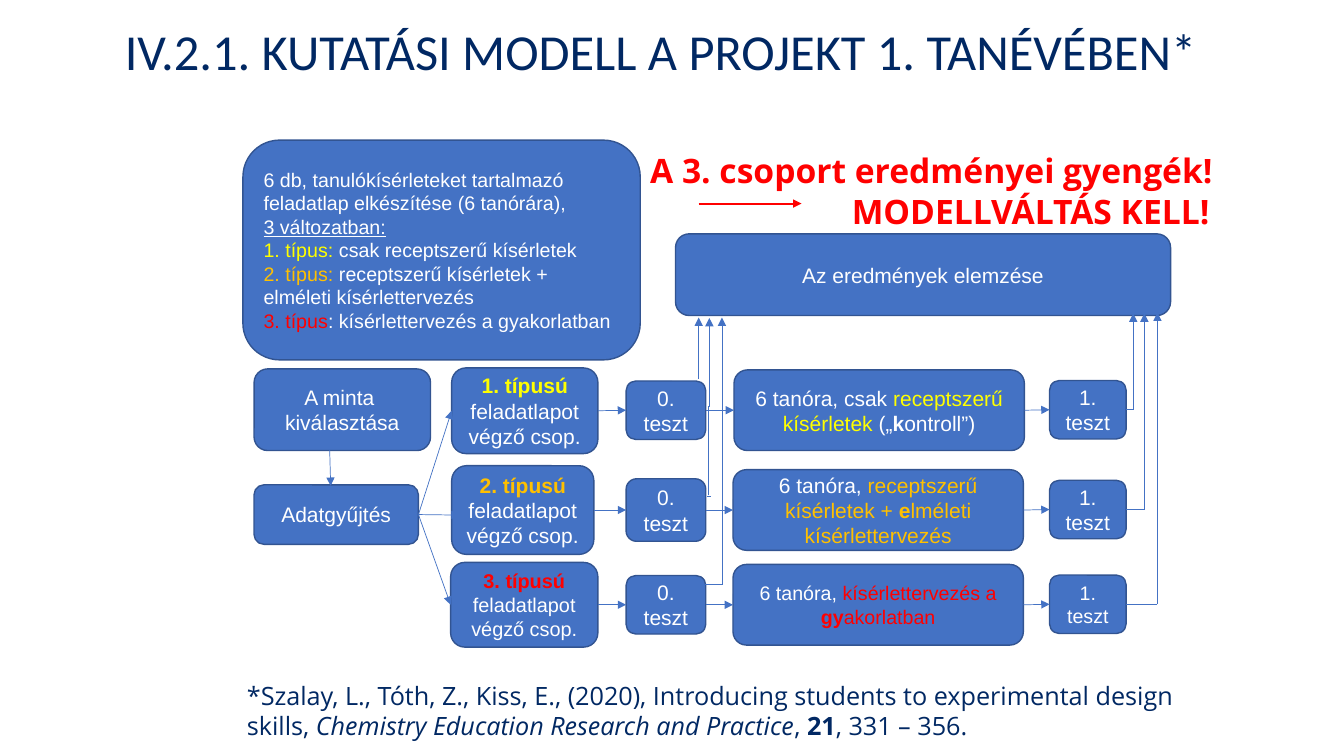
"""Build the research model slide: a three-lane flow chart with title and citation."""
from dataclasses import dataclass
from typing import Optional, Union

from lxml import etree
from pptx import Presentation, util as u
from pptx.dml.color import RGBColor
from pptx.enum import shapes, text
from pptx.oxml.ns import qn

CELL = 0.1
BLUE, EDGE, NAVY = "4472C4", "325491", "012863"
WHITE, YELLOW, ORANGE, RED = "FFFFFF", "FFFF00", "FFC000", "FF0000"
CENTER, LEFT = text.PP_ALIGN.CENTER, text.PP_ALIGN.LEFT


@dataclass
class Run:
    """A stretch of text and what sets it apart from its paragraph."""
    text: str
    color: Optional[str] = None
    bold: Optional[bool] = None
    italic: Optional[bool] = None
    underline: Optional[bool] = None


@dataclass
class Style:
    """The font shared by whole paragraphs."""
    size: float
    name: str = "Arial"
    color: str = WHITE
    align: int = CENTER
    bold: bool = False


@dataclass
class Box:
    """A rectangle in grid columns and rows."""
    x: float
    y: float
    w: float
    h: float


@dataclass
class Point:
    """A place on the grid."""
    x: float
    y: float


@dataclass
class Site:
    """A connection site of a shape."""
    shape: object
    index: int


@dataclass
class Lane:
    """One group's row through the experiment."""
    mid: float
    color: str
    group: Box
    group_size: float
    test_h: float
    lesson_x: float
    lesson_size: float
    lesson: list
    post_x: float
    post_top: float


End = Union[Point, Site]


def grid(n: float) -> int:
    """Turn grid cells into a length."""
    return u.Inches(n * CELL)


def rgb(value: str) -> RGBColor:
    """Turn a hex string into a colour."""
    return RGBColor.from_string(value)


def write(tf, paragraphs: list, style: Style) -> None:
    """Fill a text frame with paragraphs of runs."""
    tf.word_wrap = True
    for i, runs in enumerate(paragraphs):
        p = tf.paragraphs[0] if i == 0 else tf.add_paragraph()
        p.alignment = style.align
        p.font.name, p.font.size, p.font.bold = style.name, u.Pt(style.size), style.bold
        p.font.color.rgb = rgb(style.color)
        for run in runs:
            r = p.add_run()
            r.text = run.text
            r.font.bold, r.font.italic, r.font.underline = run.bold, run.italic, run.underline
            if run.color:
                r.font.color.rgb = rgb(run.color)


def add_box(s, b: Box, paragraphs: list, style: Style):
    """Draw a rounded blue box with text."""
    sp = s.shapes.add_shape(shapes.MSO_SHAPE.ROUNDED_RECTANGLE,
                            grid(b.x), grid(b.y), grid(b.w), grid(b.h))
    sp.shadow.inherit = False
    sp.fill.solid()
    sp.fill.fore_color.rgb = rgb(BLUE)
    sp.line.color.rgb = rgb(EDGE)
    sp.line.width = u.Pt(1)
    sp.text_frame.vertical_anchor = text.MSO_ANCHOR.MIDDLE
    write(sp.text_frame, paragraphs, style)
    return sp


def add_text(s, b: Box, paragraphs: list, style: Style):
    """Place a plain text box and return its text frame."""
    tf = s.shapes.add_textbox(grid(b.x), grid(b.y), grid(b.w), grid(b.h)).text_frame
    write(tf, paragraphs, style)
    return tf


def add_link(s, a: End, b: End, arrow: bool = True, color: str = BLUE, width: float = 0.5,
             kind=shapes.MSO_CONNECTOR.STRAIGHT):
    """Draw a connector between two points or connection sites."""
    p, q = (e if isinstance(e, Point) else Point(0, 0) for e in (a, b))
    c = s.shapes.add_connector(kind, grid(p.x), grid(p.y), grid(q.x), grid(q.y))
    if isinstance(a, Site):
        c.begin_connect(a.shape, a.index)
    if isinstance(b, Site):
        c.end_connect(b.shape, b.index)
    c.line.color.rgb = rgb(color)
    c.line.width = u.Pt(width)
    if arrow:
        etree.SubElement(c.line._get_or_add_ln(), qn("a:tailEnd"), type="triangle")
    etree.SubElement(c._element.spPr, qn("a:effectLst"))
    return c


LANES = [
    Lane(40.7, YELLOW, Box(44.8, 36.5, 14.5, 8.5), 15, 5.8, 72.8, 15,
         [Run("6 tanóra, csak"), Run(" receptszerű kísérletek ", YELLOW), Run("(„"),
          Run("k", bold=True), Run("ontroll”)")], 112.4, 31.1),
    Lane(50.6, ORANGE, Box(44.8, 46.2, 14.1, 8.8), 15, 6.2, 72.7, 15,
         [Run("6 tanóra, "), Run("receptszerű kísérletek + ", ORANGE),
          Run("e", ORANGE, True), Run("lméleti kísérlettervezés", ORANGE)], 113.5, 31.1),
    Lane(60, RED, Box(44.7, 55.8, 14.6, 8.4), 14.2, 5.8, 72.7, 14,
         [Run("6 tanóra, "), Run("kísérlettervezés a ", RED), Run("gy", RED, True),
          Run("akorlatban", RED)], 114.8, 31),
]


def add_lane(s, number: int, lane: Lane, source) -> None:
    """Draw one lane from its group to the final test."""
    label = [Run(f"{number}. típusú ", lane.color, True), Run("feladatlapot végző csop.")]
    group = add_box(s, lane.group, [label], Style(lane.group_size))
    pre = add_box(s, Box(62.1, lane.mid - lane.test_h / 2, 7.9, lane.test_h),
                  [[Run("0. teszt")]], Style(15))
    lesson = add_box(s, Box(lane.lesson_x, lane.mid - 4, 28.8, 8), [lane.lesson],
                     Style(lane.lesson_size))
    post = add_box(s, Box(104.1, lane.mid - 2.95, 7.6, 5.8), [[Run("1. teszt")]],
                   Style(lane.lesson_size))
    add_link(s, Site(source, 3), Point(45.6, 51.1) if number == 2 else Site(group, 1))
    for left, right in ((group, pre), (pre, lesson), (lesson, post)):
        add_link(s, Site(left, 3), Site(right, 1))
    add_link(s, Site(post, 3), Point(lane.post_x, lane.mid - 0.05), arrow=False)
    add_link(s, Point(lane.post_x, lane.mid - 0.05), Point(lane.post_x, lane.post_top))


def main() -> None:
    """Build and save the slide."""
    prs = Presentation()
    prs.slide_width, prs.slide_height = u.Inches(13.33), u.Inches(7.5)
    s = prs.slides.add_slide(prs.slide_layouts[6])

    add_box(s, Box(24.1, 13.9, 39.4, 21.8), [
        [Run("6 db, tanulókísérleteket tartalmazó feladatlap elkészítése (6 tanórára),")],
        [Run("3 változatban:", underline=True)],
        [Run("1. típus: ", YELLOW), Run("csak receptszerű kísérletek")],
        [Run("2. típus: ", ORANGE), Run("receptszerű kísérletek + elméleti kísérlettervezés")],
        [Run("3. típus", RED), Run(": kísérlettervezés a gyakorlatban")],
    ], Style(14, align=LEFT))
    add_box(s, Box(25.2, 36.6, 17.5, 8.1), [[Run("A minta ")], [Run("kiválasztása")]], Style(15))
    data = add_box(s, Box(25.2, 48.1, 16.3, 5.9), [[Run("Adatgyűjtés")]], Style(15))
    add_box(s, Box(67, 23.2, 49.1, 8.1), [[Run("Az eredmények elemzése")]], Style(15))
    add_link(s, Point(32.7, 44.6), Point(32.8, 48.2))
    for number, lane in enumerate(LANES, 1):
        add_lane(s, number, lane, data)

    add_link(s, Point(69.3, 37.6), Point(69.3, 31.5))
    add_link(s, Point(70.5, 49.2), Point(70.1, 49.2), arrow=False)
    bent = add_link(s, Point(79.1, 40.4), Point(61.5, 40.3), kind=shapes.MSO_CONNECTOR.ELBOW)
    bent._element.spPr.find(qn("a:xfrm")).set("rot", "5400000")
    add_link(s, Point(71.6, 58), Point(69.9, 58), arrow=False)
    add_link(s, Point(71.6, 58), Point(71.6, 31.5))

    add_text(s, Box(0, 1.5, 131.1, 7.1), [[Run("IV.2.1. KUTATÁSI MODELL A PROJEKT 1. TANÉVÉBEN*")]],
             Style(36, "Calibri", NAVY))
    add_text(s, Box(23.5, 67, 96.1, 7.1), [[
        Run("*Szalay, L., Tóth, Z., Kiss, E., (2020), Introducing students to experimental "
            "design skills,"),
        Run(" Chemistry Education Research and Practice", italic=True), Run(", "),
        Run("21", bold=True), Run(", 331 – 356.")]], Style(18, "Open Sans", NAVY, LEFT))
    tf = add_text(s, Box(63.5, 14.4, 62.8, 9.1), [[Run("A 3. csoport eredményei gyengék!")],
                  [Run("MODELLVÁLTÁS KELL!")]], Style(24, "Open Sans", RED, LEFT, True))
    pPr = tf.paragraphs[1]._p.get_or_add_pPr()
    pPr.set("marL", str(grid(20)))
    pPr.set("indent", "0")
    add_link(s, Point(69.3, 20.2), Point(79.5, 20.2), color=RED, width=1.5)
    prs.save("out.pptx")


if __name__ == "__main__":
    main()
